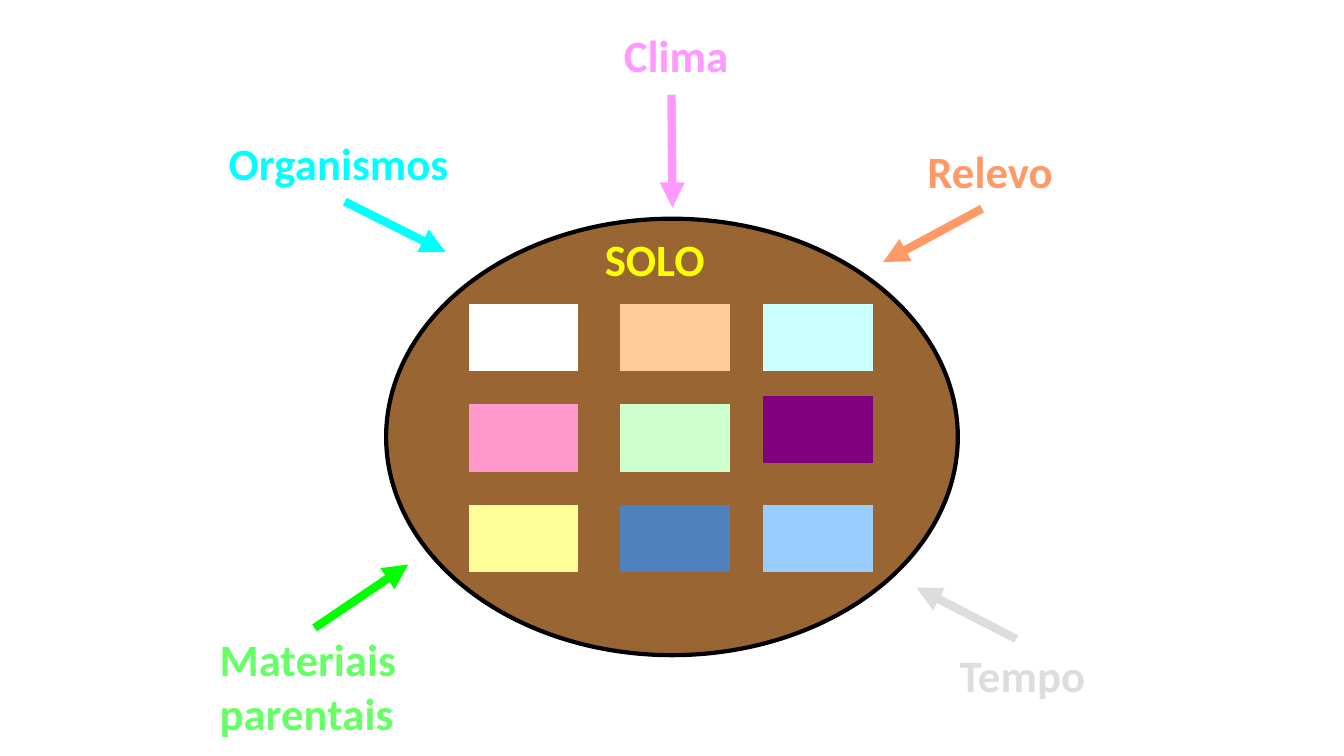
"""Build a slide showing the five soil-forming factors acting on the soil."""
import lxml.etree
import pptx
import pptx.dml.color
import pptx.enum.shapes
import pptx.oxml.ns
import pptx.util

Inches = pptx.util.Inches
Pt = pptx.util.Pt
RGBColor = pptx.dml.color.RGBColor
SHAPE = pptx.enum.shapes.MSO_SHAPE
qn = pptx.oxml.ns.qn

THEME = {
    "font": "Calibri", "label_size": 32, "outline_width": 3, "thick_width": 6,
    "soil": "996633", "outline": "000000", "soil_label": "FFFF00",
    "climate": "FF99FF", "organisms": "00FFFF", "relief": "FF9966",
    "time": "DDDDDD", "material_arrow": "00FF00", "material_label": "66FF66",
    "horizons": [
        ["FFFFFF", "FFCC99", "CCFFFF"],
        ["FF99CC", "CCFFCC", "800080"],
        ["FFFF99", "4F81BD", "99CCFF"],
    ],
}


def add_label(text, *, box, color):
    """Add a bold label in the given box."""
    label = slide.shapes.add_textbox(*[Inches(length) for length in box])
    label.text_frame.word_wrap = True
    run = label.text_frame.paragraphs[0].add_run()
    run.text = text
    run.font.name = THEME["font"]
    run.font.size = Pt(THEME["label_size"])
    run.font.bold = True
    run.font.color.rgb = RGBColor.from_string(color)


def add_filled_shape(kind, box, fill, line, width):
    """Add a flat preset shape with fill and outline."""
    shape = slide.shapes.add_shape(kind, *[Inches(length) for length in box])
    shape.shadow.inherit = False
    shape.fill.solid()
    shape.fill.fore_color.rgb = RGBColor.from_string(fill)
    shape.line.color.rgb = RGBColor.from_string(line)
    shape.line.width = Pt(width)


presentation = pptx.Presentation()
presentation.slide_width = Inches(13.33)
presentation.slide_height = Inches(7.5)
slide = presentation.slides.add_slide(presentation.slide_layouts[6])

add_filled_shape(SHAPE.OVAL, (3.83, 2.17, 5.67, 4.33),
                 THEME["soil"], THEME["outline"], THEME["outline_width"])

arrows = [
    ("organisms", (3.42, 2, 4.42, 2.5)),
    ("material_arrow", (3.12, 6.23, 4.05, 5.6)),
    ("relief", (9.74, 2.07, 8.76, 2.6)),
    ("time", (10.08, 6.34, 9.09, 5.83)),
    ("climate", (6.66, 0.94, 6.67, 2.06)),
]
for color_name, ends in arrows:
    arrow = slide.shapes.add_connector(
        pptx.enum.shapes.MSO_CONNECTOR.STRAIGHT, *[Inches(length) for length in ends])
    arrow.line.color.rgb = RGBColor.from_string(THEME[color_name])
    arrow.line.width = Pt(THEME["thick_width"])
    lxml.etree.SubElement(arrow.line._get_or_add_ln(), qn("a:tailEnd"), type="triangle")
    lxml.etree.SubElement(arrow._element.spPr, qn("a:effectLst"))

labels = [
    ("Clima", "climate", (6.09, 0.23, 1.28, 0.63)),
    ("Organismos", "organisms", (2.17, 1.3, 2.43, 0.63)),
    ("Materiais parentais", "material_label", (2.08, 6.22, 2.17, 1.16)),
    ("Relevo", "relief", (9.1, 1.38, 1.49, 0.63)),
    ("Tempo", "time", (9.42, 6.38, 1.49, 0.63)),
    ("SOLO", "soil_label", (5.9, 2.25, 1.24, 0.63)),
]

column_lefts = [4.61, 6.11, 7.53]
first_row_top, row_pitch = 2.97, 1
raised_cell, raised_by = (1, 2), 0.08
for row, colors in enumerate(THEME["horizons"]):
    for column, color in enumerate(colors):
        top = first_row_top + row * row_pitch
        if (row, column) == raised_cell:
            top -= raised_by
        add_filled_shape(SHAPE.RECTANGLE, (column_lefts[column], top, 1.17, 0.75),
                         color, THEME["soil"], THEME["thick_width"])

for text, color_name, box in labels:
    add_label(text, box=box, color=THEME[color_name])

presentation.save("out.pptx")
